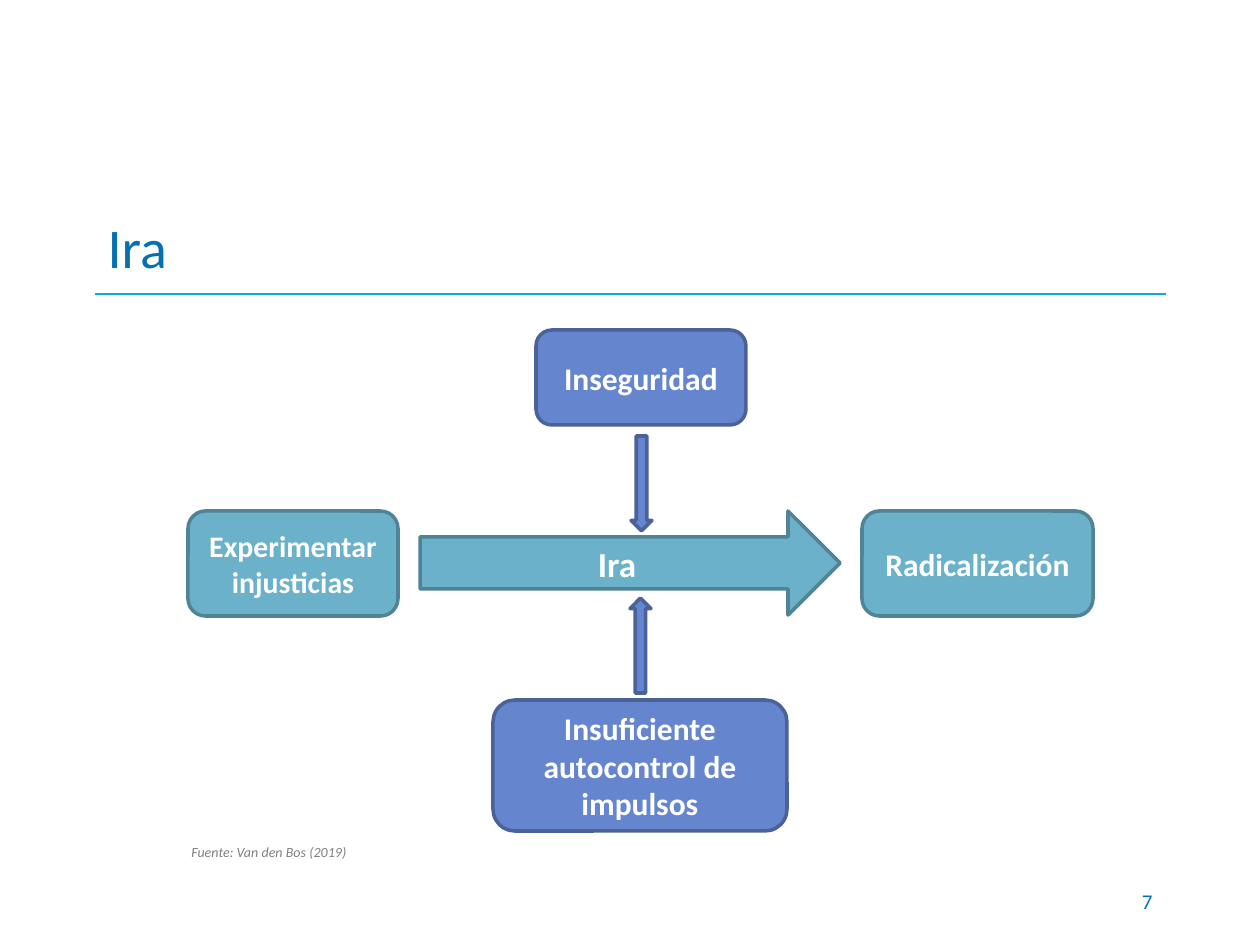
import pptx
import pptx.util
import pptx.dml.color
import pptx.enum.shapes
import pptx.enum.text
import pptx.oxml

RGBColor = pptx.dml.color.RGBColor
Kind = pptx.enum.shapes.MSO_SHAPE
Align = pptx.enum.text.PP_ALIGN
Anchor = pptx.enum.text.MSO_ANCHOR

EMU_PER_PX = 914400 / 126
BLUE = RGBColor(0x07, 0x70, 0xB1)
RULE = RGBColor(0x0B, 0xA7, 0xDF)
WHITE = RGBColor(0xFF, 0xFF, 0xFF)
GREY = RGBColor(0x80, 0x80, 0x80)
TEAL = (RGBColor(0x6B, 0xB1, 0xC9), RGBColor(0x4F, 0x83, 0x95))
INDIGO = (RGBColor(0x65, 0x85, 0xCF), RGBColor(0x4B, 0x62, 0x99))

# Content: kind, (left, top, width, height) in px, colours, text, size, rotation
TITLE = "Ira"
SOURCE = "Fuente: Van den Bos (2019)"
PAGE_NUMBER = "7"
DIAGRAM = [
    (Kind.ROUNDED_RECTANGLE, (188, 511, 210, 105), TEAL, "Experimentar injusticias", 17, 0),
    (Kind.ROUNDED_RECTANGLE, (862, 511, 231, 105), TEAL, "Radicalización", 18, 0),
    (Kind.RIGHT_ARROW, (420, 511, 420, 104), TEAL, "Ira", 20, 0),
    (Kind.RIGHT_ARROW, (594, 473, 95, 21), INDIGO, "", 18, 90),
    (Kind.RIGHT_ARROW, (593, 635, 95, 21), INDIGO, "", 18, 270),
    (Kind.ROUNDED_RECTANGLE, (493, 700, 294, 131), INDIGO, "Insuficiente autocontrol de impulsos", 18, 0),
    (Kind.ROUNDED_RECTANGLE, (536, 330, 210, 95), INDIGO, "Inseguridad", 18, 0),
]


def px(*lengths):
    return [pptx.util.Emu(round(length * EMU_PER_PX)) for length in lengths]


def write(shape, text, align, anchor, color, **formats):
    frame = shape.text_frame
    frame.word_wrap = True
    frame.vertical_anchor = anchor
    para = frame.paragraphs[0]
    para.alignment = align
    span = para.add_run()
    span.text = text
    span.font.color.rgb = color
    formats["size"] = pptx.util.Pt(formats["size"])
    for name, value in {"name": "Calibri", **formats}.items():
        setattr(span.font, name, value)


deck = pptx.Presentation()
deck.slide_width, deck.slide_height = px(1260, 945)
page = deck.slides.add_slide(deck.slide_layouts[5])

# Title and the rule under it
title = page.shapes.title
title.left, title.top, title.width, title.height = px(95, 199, 1071, 95)
write(title, TITLE, Align.LEFT, Anchor.MIDDLE, BLUE, size=32)

rule = page.shapes.add_connector(pptx.enum.shapes.MSO_CONNECTOR.STRAIGHT, *px(95, 294, 1166, 294))
rule.line.color.rgb = RULE
rule.line.width = pptx.util.Pt(0.75)
rule._element.spPr.append(pptx.oxml.parse_xml(
    '<a:effectLst xmlns:a="http://schemas.openxmlformats.org/drawingml/2006/main"/>'))

# Boxes and block arrows
for kind, place, (fill, outline), text, size, rotation in DIAGRAM:
    shape = page.shapes.add_shape(kind, *px(*place))
    shape.rotation = rotation
    shape.shadow.inherit = False
    shape.fill.solid()
    shape.fill.fore_color.rgb = fill
    shape.line.color.rgb = outline
    shape.line.width = pptx.util.Pt(2)
    if text:
        write(shape, text, Align.CENTER, Anchor.MIDDLE, WHITE, size=size, bold=True)

# Source and page number
source = page.shapes.add_textbox(*px(95, 837, 348, 30))
write(source, SOURCE, Align.CENTER, Anchor.TOP, GREY, size=8, italic=True)
number = page.shapes.add_textbox(*px(903, 876, 262, 50))
write(number, PAGE_NUMBER, Align.RIGHT, Anchor.MIDDLE, BLUE, size=12)

deck.save("out.pptx")
